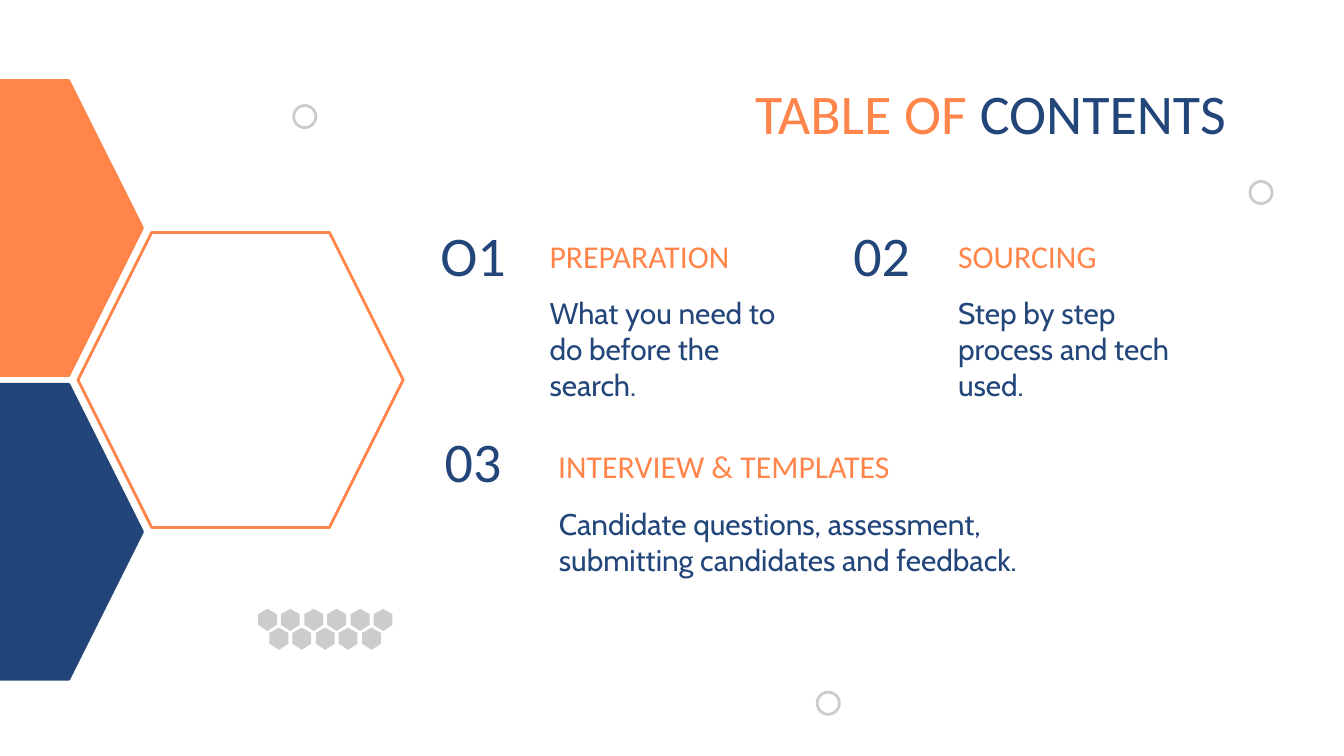
"""Build a table of contents slide with hexagon decoration."""
from pptx import Presentation
from pptx.dml.color import RGBColor
from pptx.enum.shapes import MSO_SHAPE
from pptx.enum.text import MSO_ANCHOR, PP_ALIGN
from pptx.util import Pt

SCALE = 4572
COLORS = {"orange": "FF854A", "navy": "22467A", "gray": "CCCCCC"}


def px(*values):
    return [value * SCALE for value in values]


def color(name):
    return RGBColor.from_string(COLORS[name])


def add_text(slide, box, parts, size, font="Calibri", align=PP_ALIGN.LEFT,
             anchor=MSO_ANCHOR.TOP, space_after=0):
    text_frame = slide.shapes.add_textbox(*px(*box)).text_frame
    text_frame.word_wrap = True
    text_frame.vertical_anchor = anchor
    text_frame.margin_left = text_frame.margin_right = 20 * SCALE
    text_frame.margin_top = text_frame.margin_bottom = 20 * SCALE
    paragraph = text_frame.paragraphs[0]
    paragraph.alignment = align
    paragraph.space_after = Pt(space_after)
    for text, color_name in parts:
        run = paragraph.add_run()
        run.text = text
        run.font.size = Pt(size)
        run.font.name = font
        run.font.color.rgb = color(color_name)


def style_shape(shape, fill=None, line=None):
    shape.shadow.inherit = False
    if fill:
        shape.fill.solid()
        shape.fill.fore_color.rgb = color(fill)
    else:
        shape.fill.background()
    if line:
        shape.line.color.rgb = color(line)
        shape.line.width = Pt(1.5)
    else:
        shape.line.fill.background()


def add_outlined(slide, kind, box, line, fill=None):
    style_shape(slide.shapes.add_shape(kind, *px(*box)), fill, line)


def add_entry(slide, number, heading, body, number_at, heading_box, body_box):
    add_text(slide, heading_box, [(heading, "orange")], 17, space_after=12)
    add_text(slide, body_box, [(body, "navy")], 16, font="Cabin")
    add_text(slide, (*number_at, 190, 90), [(number, "navy")], 30,
             align=PP_ALIGN.CENTER, anchor=MSO_ANCHOR.MIDDLE)


def add_honeycomb(slide):
    group = slide.shapes.add_group_shape()
    for left, top, count in ((384, 906, 6), (401, 934, 5)):
        for index in range(count):
            x = round(left + index * 34.4)
            builder = group.shapes.build_freeform(x + 14, top, scale=SCALE)
            builder.add_line_segments([
                (x, top + 8), (x, top + 24), (x + 14, top + 33),
                (x + 28, top + 24), (x + 28, top + 8)], close=True)
            style_shape(builder.convert_to_shape(), fill="gray")


def main():
    presentation = Presentation()
    presentation.slide_width, presentation.slide_height = px(2000, 1125)
    slide = presentation.slides.add_slide(presentation.slide_layouts[6])

    add_text(slide, (156, 97, 1688, 126),
             [("TABLE OF ", "orange"), ("CONTENTS", "navy")], 30,
             align=PP_ALIGN.RIGHT)
    for left, number, heading, body in (
            (609, "O1", "PREPARATION", "What you need to do before the search."),
            (1217, "02", "SOURCING", "Step by step process and tech used.")):
        add_entry(slide, number, heading, body, (left, 333),
                  (left + 189, 332, 418, 100), (left + 189, 419, 418, 226))
    add_entry(slide, "03", "INTERVIEW & TEMPLATES",
              "Candidate questions, assessment, submitting candidates and feedback.",
              (609, 640), (811, 645, 920, 94), (812, 733, 860, 226))

    for left, top, line, fill in ((-272, 120, "orange", "orange"),
                                  (116, 346, "orange", None),
                                  (-272, 572, "navy", "navy")):
        add_outlined(slide, MSO_SHAPE.HEXAGON, (left, top, 484, 439), line, fill)
    add_honeycomb(slide)
    for left, top in ((1216, 1030), (437, 157), (1860, 270)):
        add_outlined(slide, MSO_SHAPE.OVAL, (left, top, 33, 33), "gray")

    presentation.save("out.pptx")


if __name__ == "__main__":
    main()
